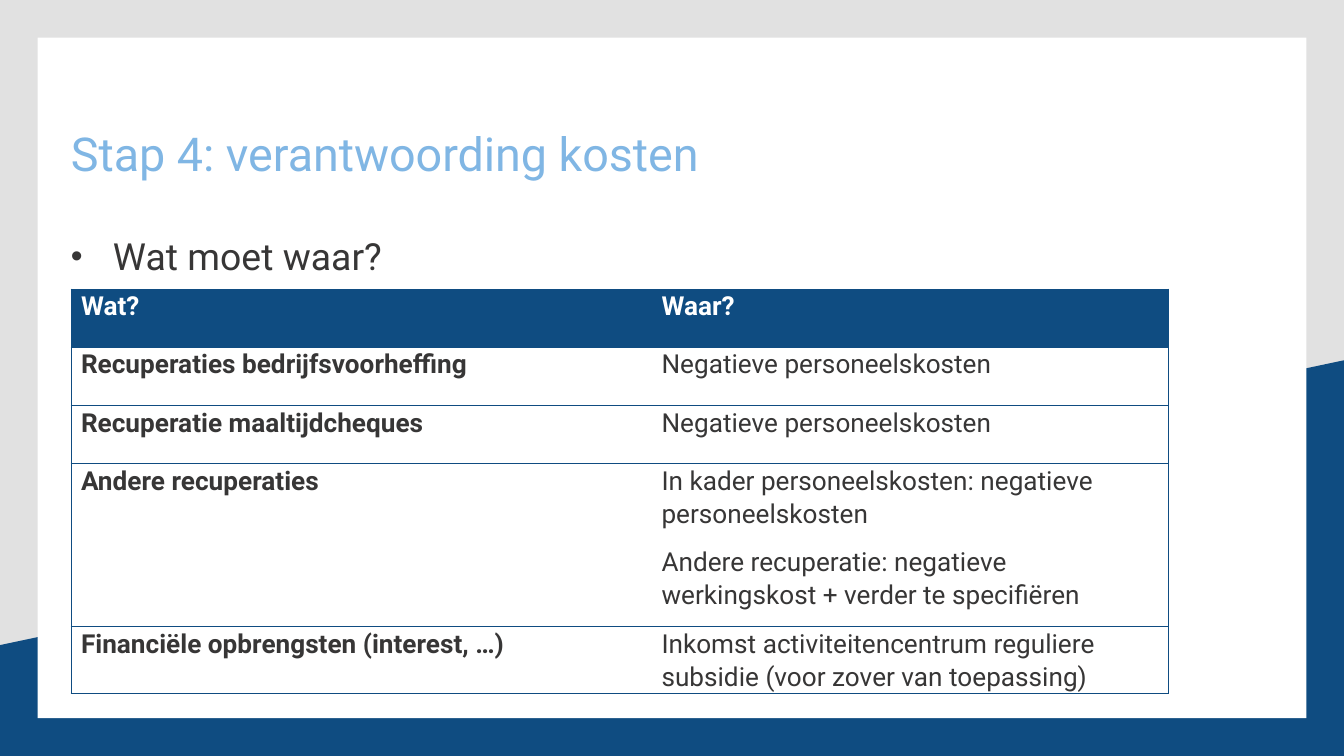
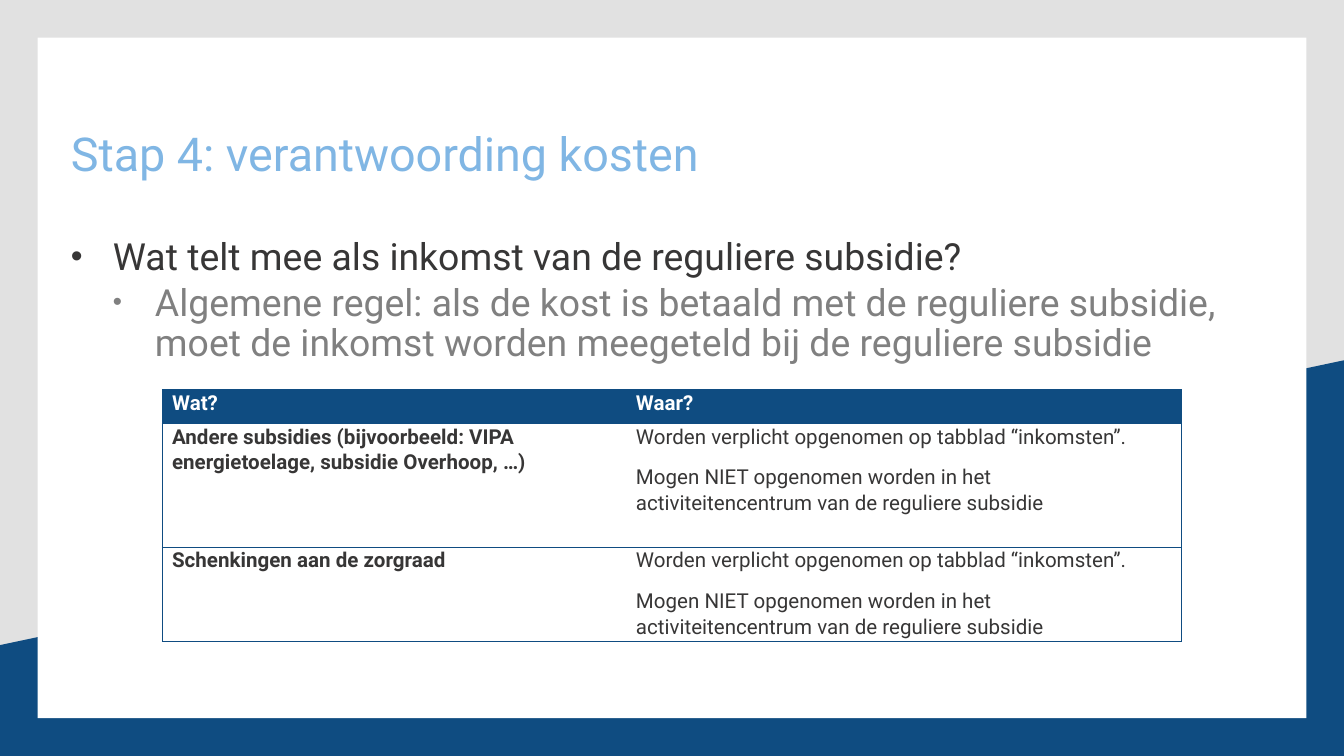
from lxml.etree import SubElement
from pptx import Presentation
from pptx.dml.color import RGBColor
from pptx.enum.shapes import MSO_SHAPE
from pptx.enum.text import MSO_ANCHOR
from pptx.oxml import parse_xml
from pptx.oxml.ns import nsdecls, qn
from pptx.util import Pt

BLUE = RGBColor(0x0F, 0x4C, 0x81)
LIGHT_BLUE = RGBColor(0x80, 0xB6, 0xE4)
DARK = RGBColor(0x37, 0x36, 0x36)
GRAY = RGBColor(0x80, 0x80, 0x80)
BACKDROP = RGBColor(0xE1, 0xE1, 0xE1)
WHITE = RGBColor(0xFF, 0xFF, 0xFF)

WIDTH, HEIGHT = 720, 405
MARGIN = 20.2
LEFT = 38
INDENT = 22.5
FONT = "Roboto"
TITLE = "Stap 4: verantwoording kosten"
HEADER = ("Wat?", "Waar?")
BULLET_LEVELS = ((DARK, 90), (GRAY, 70))

COST_ROWS = [
    HEADER,
    ("Recuperaties bedrijfsvoorheffing", "Negatieve personeelskosten"),
    ("Recuperatie maaltijdcheques", "Negatieve personeelskosten"),
    ("Andere recuperaties",
     "In kader personeelskosten: negatieve personeelskosten\n"
     "Andere recuperatie: negatieve werkingskost + verder te specifiëren"),
    ("Financiële opbrengsten (interest, …)",
     "Inkomst activiteitencentrum reguliere subsidie (voor zover van toepassing)"),
]
INCOME_RULE = (
    "Worden verplicht opgenomen op tabblad “inkomsten”.\n"
    "Mogen NIET opgenomen worden in het activiteitencentrum van de reguliere subsidie"
)
INCOME_ROWS = [
    HEADER,
    ("Andere subsidies (bijvoorbeeld: VIPA energietoelage, subsidie Overhoop, …)",
     INCOME_RULE),
    ("Schenkingen aan de zorgraad", INCOME_RULE),
]


def set_values(target, values):
    for name, value in values.items():
        setattr(target, name, value)


class Deck:
    def __init__(self):
        self.presentation = Presentation()
        set_values(self.presentation, {"slide_width": Pt(WIDTH), "slide_height": Pt(HEIGHT)})
        self.slide = None

    def add_slide(self):
        self.slide = self.presentation.slides.add_slide(self.presentation.slide_layouts[6])
        background = self.slide.background.fill
        background.solid()
        background.fore_color.rgb = BACKDROP
        builder = self.slide.shapes.build_freeform(Pt(WIDTH), Pt(193))
        corners = ((WIDTH, HEIGHT), (0, HEIGHT), (0, 345.6))
        builder.add_line_segments([(Pt(x), Pt(y)) for x, y in corners])
        self.paint(builder.convert_to_shape(), BLUE)
        panel = self.slide.shapes.add_shape(
            MSO_SHAPE.RECTANGLE, Pt(MARGIN), Pt(MARGIN),
            Pt(WIDTH - 2 * MARGIN), Pt(HEIGHT - 2 * MARGIN))
        self.paint(panel, WHITE)
        self.add_title()

    def paint(self, shape, color):
        shape.shadow.inherit = False
        shape.fill.solid()
        shape.fill.fore_color.rgb = color
        shape.line.fill.background()

    def add_text(self, paragraph, text, size, color, bold=False, **spacing):
        set_values(paragraph, spacing)
        run = paragraph.add_run()
        run.text = text
        set_values(run.font, {"name": FONT, "size": Pt(size), "bold": bold})
        run.font.color.rgb = color

    def add_frame(self, top, width, height):
        box = self.slide.shapes.add_textbox(Pt(LEFT), Pt(top), Pt(width), Pt(height))
        set_values(box.text_frame, {
            "word_wrap": True, "vertical_anchor": MSO_ANCHOR.TOP,
            "margin_left": 0, "margin_right": 0, "margin_top": 0, "margin_bottom": 0})
        return box.text_frame

    def add_title(self):
        frame = self.add_frame(70.5, 548, 52)
        self.add_text(frame.paragraphs[0], TITLE, 25, LIGHT_BLUE, line_spacing=0.9)

    def add_bullets(self, width, texts):
        frame = self.add_frame(127.5, width, 244)
        for level, text in enumerate(texts):
            color, percent = BULLET_LEVELS[level]
            paragraph = frame.add_paragraph() if level else frame.paragraphs[0]
            properties = paragraph._p.get_or_add_pPr()
            properties.set("marL", str(Pt(INDENT * (level + 1))))
            properties.set("indent", str(-Pt(INDENT)))
            SubElement(properties, qn("a:buSzPct"), val=str(percent * 1000))
            SubElement(properties, qn("a:buFont"), typeface="Arial")
            SubElement(properties, qn("a:buChar"), char="•")
            self.add_text(paragraph, text, 20, color, level=level, line_spacing=0.9,
                          space_before=Pt(3 if level else 0))

    def add_table(self, left, top, height, columns, heights, rows, size, inset):
        shape = self.slide.shapes.add_table(
            len(rows), len(columns), Pt(left), Pt(top), Pt(sum(columns)), Pt(height))
        table = shape.table
        set_values(table, {"first_row": False, "horz_banding": False})
        for column, width in zip(table.columns, columns):
            column.width = Pt(width)
        for row, row_height in zip(table.rows, heights):
            row.height = Pt(row_height)
        shape.height = Pt(height)
        for row_index, texts in enumerate(rows):
            for column_index, text in enumerate(texts):
                self.fill_cell(table.cell(row_index, column_index), text, size, inset,
                               row_index == 0, column_index == 0)

    def fill_cell(self, cell, text, size, inset, is_header, is_first):
        set_values(cell, {"margin_left": Pt(inset), "margin_right": Pt(inset),
                          "margin_top": 0, "margin_bottom": 0})
        cell.fill.solid()
        cell.fill.fore_color.rgb = BLUE if is_header else WHITE
        self.add_borders(cell, {"L": is_first, "R": not is_first, "T": True, "B": True})
        frame = cell.text_frame
        for index, line in enumerate(text.split("\n")):
            paragraph = frame.add_paragraph() if index else frame.paragraphs[0]
            self.add_text(paragraph, line, size, WHITE if is_header else DARK,
                          is_header or is_first, line_spacing=1.07, space_after=Pt(8))

    def add_borders(self, cell, sides):
        properties = cell._tc.get_or_add_tcPr()
        solid = f'<a:solidFill><a:srgbClr val="{BLUE}"/></a:solidFill>'
        for position, (side, visible) in enumerate(sides.items()):
            fill = solid if visible else "<a:noFill/>"
            properties.insert(position, parse_xml(
                f'<a:ln{side} {nsdecls("a")} w="{Pt(0.5)}">{fill}</a:ln{side}>'))


def main():
    deck = Deck()
    deck.add_slide()
    deck.add_bullets(312, ["Wat moet waar?"])
    deck.add_table(LEFT, 154.8, 216, (311, 277), (31.3, 31.3, 31, 87.3, 16.6),
                   COST_ROWS, 14, 5.4)
    deck.add_slide()
    deck.add_bullets(659, [
        "Wat telt mee als inkomst van de reguliere subsidie?",
        "Algemene regel: als de kost is betaald met de reguliere subsidie, "
        "moet de inkomst worden meegeteld bij de reguliere subsidie"])
    deck.add_table(87, 208.8, 134.6, (248.5, 297.5), (18, 66.4, 18),
                   INCOME_ROWS, 11, 5.2)
    deck.presentation.save("out.pptx")


if __name__ == "__main__":
    main()
